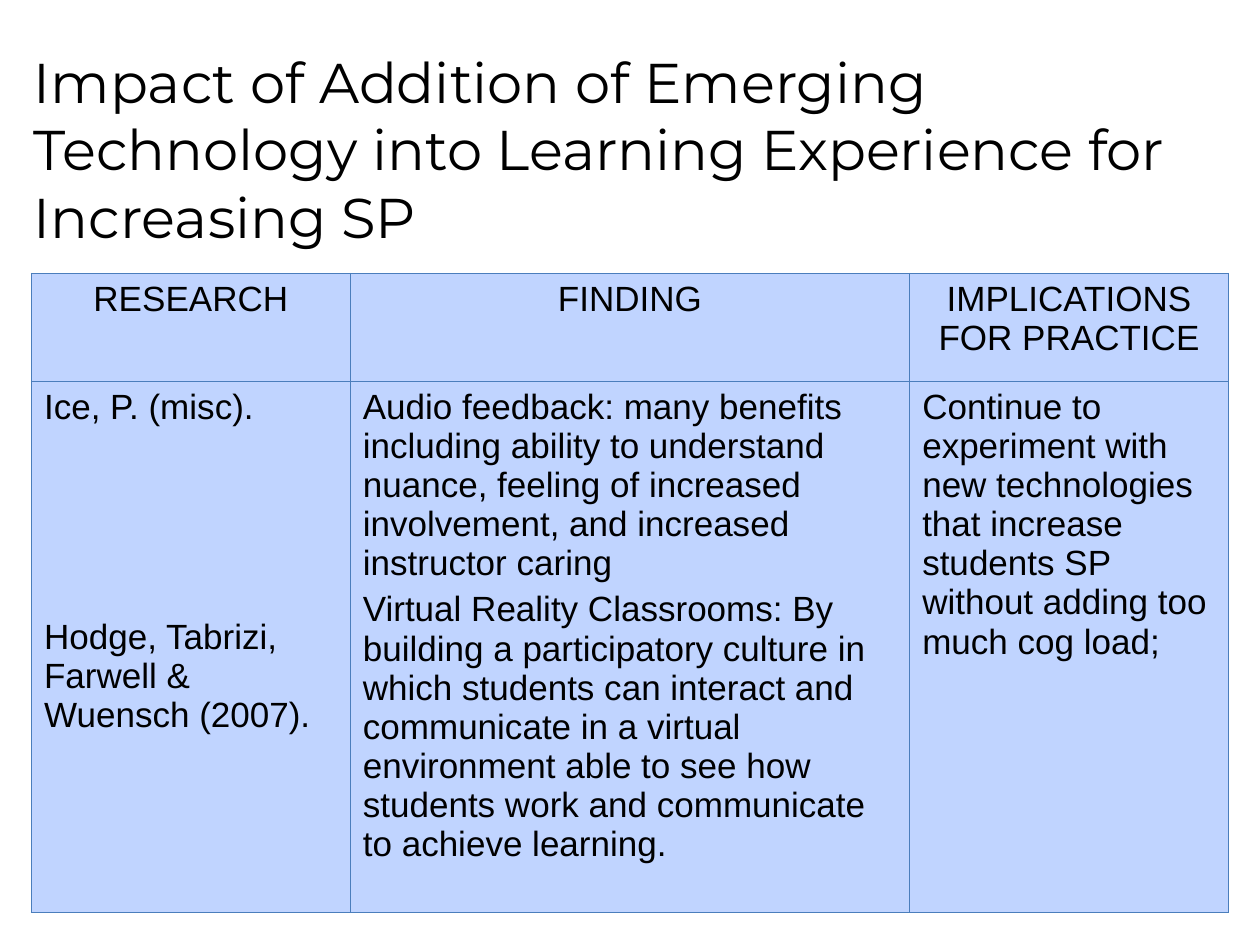
"""Build a slide with a title and a table of research on emerging technology."""
from lxml.etree import SubElement
from pptx import Presentation
from pptx.dml.color import RGBColor
from pptx.enum.text import PP_ALIGN
from pptx.oxml.ns import qn
from pptx.util import Inches, Pt

BLACK = RGBColor(0x00, 0x00, 0x00)
CELL_BLUE = RGBColor(0xC0, 0xD4, 0xFF)
BORDER_BLUE = RGBColor(0x4B, 0x7E, 0xBC)
COLUMN_WIDTHS = [2.53, 4.44, 2.53]
ROW_HEIGHTS = [0.86, 4.21]
PARAGRAPH_GAP = 4
CITATION_GAP = 109

ROWS = [
    [["RESEARCH"], ["FINDING"], ["IMPLICATIONS FOR PRACTICE"]],
    [
        ["Ice, P. (misc).", "Hodge, Tabrizi, Farwell & Wuensch (2007)."],
        [
            "Audio feedback: many benefits including ability to understand nuance, "
            "feeling of increased involvement, and increased instructor caring",
            "Virtual Reality Classrooms: By building a participatory culture in which "
            "students can interact and communicate in a virtual environment able to see "
            "how students work and communicate to achieve learning.",
        ],
        [
            "Continue to experiment with new technologies that increase students SP "
            "without adding too much cog load;"
        ],
    ],
]


def add_run(paragraph, text, font_name, size):
    run = paragraph.add_run()
    run.text = text
    run.font.name = font_name
    run.font.size = Pt(size)
    run.font.color.rgb = BLACK


def add_borders(cell):
    properties = cell._tc.get_or_add_tcPr()
    for side in ("a:lnL", "a:lnR", "a:lnT", "a:lnB"):
        line = SubElement(properties, qn(side), w=str(Pt(0.75)))
        fill = SubElement(line, qn("a:solidFill"))
        SubElement(fill, qn("a:srgbClr"), val=str(BORDER_BLUE))


presentation = Presentation()
presentation.slide_width = Inches(10)
presentation.slide_height = Inches(7.5)
slide = presentation.slides.add_slide(presentation.slide_layouts[6])

table = slide.shapes.add_table(
    len(ROWS), len(COLUMN_WIDTHS),
    Inches(0.25), Inches(2.17), Inches(sum(COLUMN_WIDTHS)), Inches(sum(ROW_HEIGHTS)),
).table
table.horz_banding = False
table.first_row = False
for column, width in zip(table.columns, COLUMN_WIDTHS):
    column.width = Inches(width)

for row_index, (row, height) in enumerate(zip(ROWS, ROW_HEIGHTS)):
    table.rows[row_index].height = Inches(height)
    for column_index, texts in enumerate(row):
        cell = table.cell(row_index, column_index)
        add_borders(cell)
        cell.fill.solid()
        cell.fill.fore_color.rgb = CELL_BLUE
        for text_index, text in enumerate(texts):
            frame = cell.text_frame
            paragraph = frame.add_paragraph() if text_index else frame.paragraphs[0]
            paragraph.alignment = PP_ALIGN.LEFT if row_index else PP_ALIGN.CENTER
            is_second_citation = column_index == 0 and text_index == 1
            paragraph.space_before = Pt(CITATION_GAP if is_second_citation else PARAGRAPH_GAP)
            add_run(paragraph, text, "Arial", 20)

title = slide.shapes.add_textbox(Inches(0.17), Inches(0.33), Inches(9.67), Inches(1.72))
title.text_frame.word_wrap = True
add_run(
    title.text_frame.paragraphs[0],
    "Impact of Addition of Emerging Technology into Learning Experience for Increasing SP",
    "Montserrat", 32,
)

presentation.save("out.pptx")
